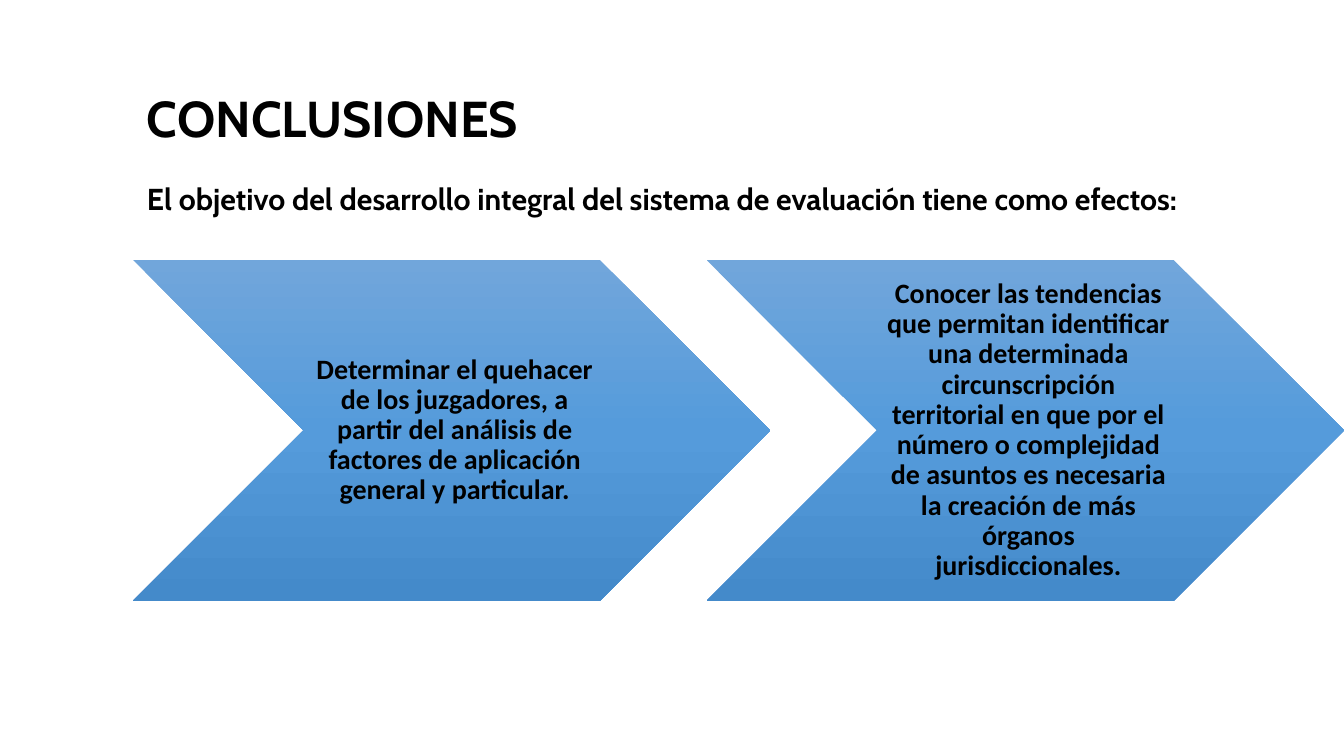
"""Build the conclusions slide with two chevrons."""
from copy import deepcopy
from dataclasses import dataclass

from pptx import Presentation
from pptx.dml.color import RGBColor
from pptx.enum.shapes import MSO_SHAPE
from pptx.enum.text import MSO_ANCHOR, PP_ALIGN
from pptx.oxml.ns import qn
from pptx.slide import Slide
from pptx.text.text import TextFrame, _Paragraph
from pptx.util import Inches, Pt

CHEVRON = MSO_SHAPE.CHEVRON
MIDDLE = MSO_ANCHOR.MIDDLE
CENTER = PP_ALIGN.CENTER
BLACK = RGBColor(0x00, 0x00, 0x00)
LIGHT = RGBColor(0x71, 0xA6, 0xDB)
BLUE = RGBColor(0x55, 0x9B, 0xDB)
DEEP = RGBColor(0x44, 0x8A, 0xCA)
STOPS = ((0, LIGHT), (0.5, BLUE), (1, DEEP))
TOP, WIDTH, HEIGHT = 2.58, 6.32, 3.38
INDENT, INNER = 1.69, 2.94


@dataclass
class Effect:
    left: float
    text: str


EFFECTS = (
    Effect(1.32, "Determinar el quehacer de los juzgadores, a partir del análisis "
                 "de factores de aplicación general y particular."),
    Effect(7.01, "Conocer las tendencias que permitan identificar una determinada "
                 "circunscripción territorial en que por el número o complejidad "
                 "de asuntos es necesaria la creación de más órganos "
                 "jurisdiccionales."),
)


def add_box(slide: Slide, left: float, top: float,
            width: float, height: float) -> TextFrame:
    box = slide.shapes.add_textbox(
        Inches(left), Inches(top), Inches(width), Inches(height))
    frame = box.text_frame
    frame.word_wrap = True
    frame.vertical_anchor = MIDDLE
    return frame


def style(para: _Paragraph, text: str, face: str, size: float) -> None:
    para.text = text
    para.line_spacing = 0.9
    para.font.name = face
    para.font.size = Pt(size)
    para.font.bold = True
    para.font.color.rgb = BLACK


def add_title(slide: Slide) -> None:
    frame = add_box(slide, 1.36, 0.92, 11.33, 1.25)
    style(frame.paragraphs[0], "CONCLUSIONES", "Cabin", 36)
    para = frame.add_paragraph()
    style(para, "El objetivo del desarrollo integral del sistema de evaluación "
                "tiene como efectos:", "Cabin", 21.6)
    para.space_before = Pt(26)


def add_effect(slide: Slide, effect: Effect) -> None:
    shape = slide.shapes.add_shape(
        CHEVRON, Inches(effect.left), Inches(TOP), Inches(WIDTH), Inches(HEIGHT))
    shape.shadow.inherit = False
    shape.line.fill.background()
    fill = shape.fill
    fill.gradient()
    fill.gradient_angle = 270
    stops = shape._element.spPr.find(qn("a:gradFill")).find(qn("a:gsLst"))
    stops.append(deepcopy(stops[0]))
    for stop, (place, color) in zip(fill.gradient_stops, STOPS):
        stop.position = place
        stop.color.rgb = color

    frame = add_box(slide, effect.left + INDENT, TOP, INNER, HEIGHT)
    frame.margin_left = Inches(0.09)
    frame.margin_right = frame.margin_top = frame.margin_bottom = Inches(0.03)
    para = frame.paragraphs[0]
    style(para, effect.text, "Calibri", 20)
    para.alignment = CENTER


def main() -> None:
    deck = Presentation()
    deck.slide_width = Inches(13.33)
    deck.slide_height = Inches(7.5)
    slide = deck.slides.add_slide(deck.slide_layouts[6])
    for effect in EFFECTS:
        add_effect(slide, effect)
    add_title(slide)
    deck.save("out.pptx")


if __name__ == "__main__":
    main()
